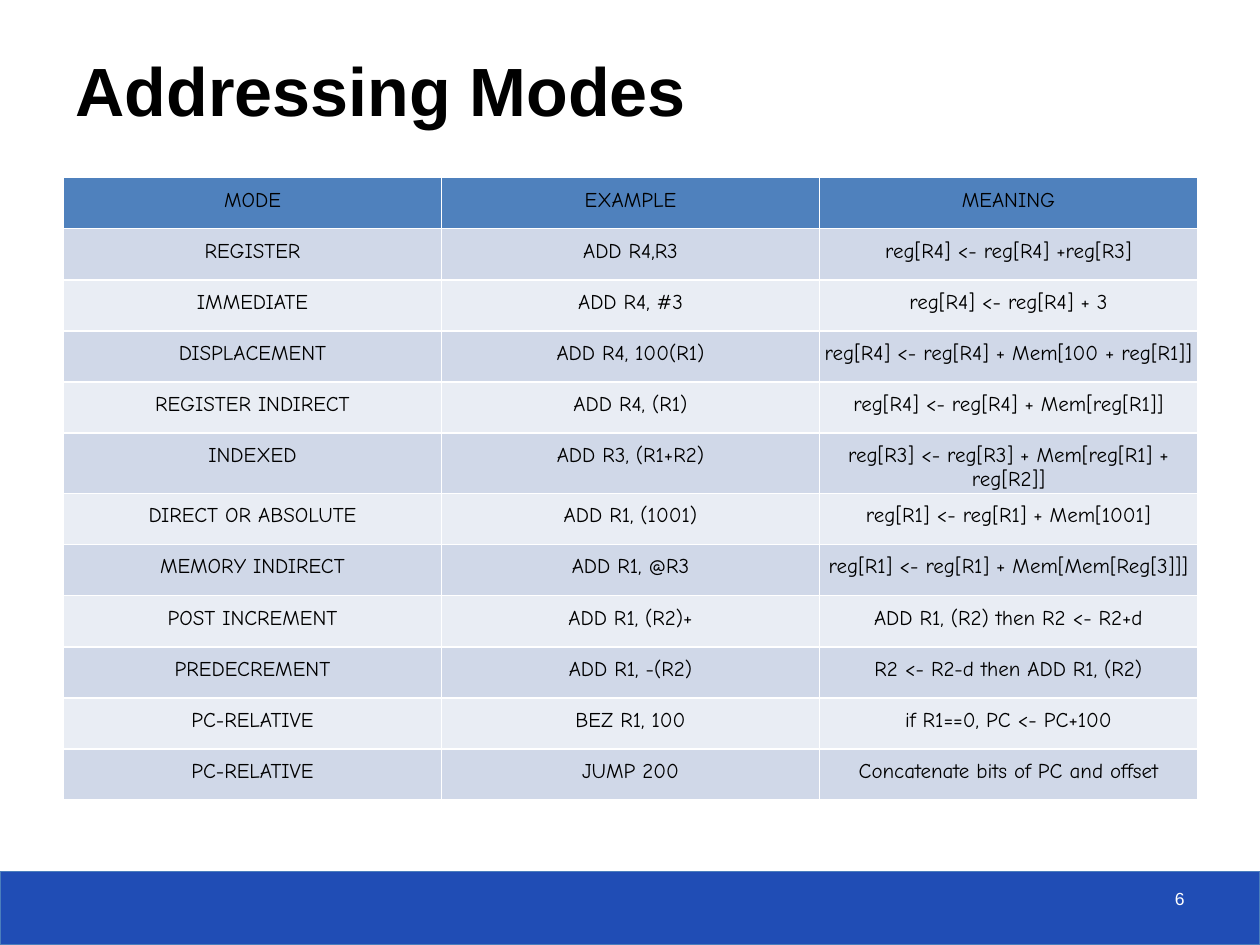
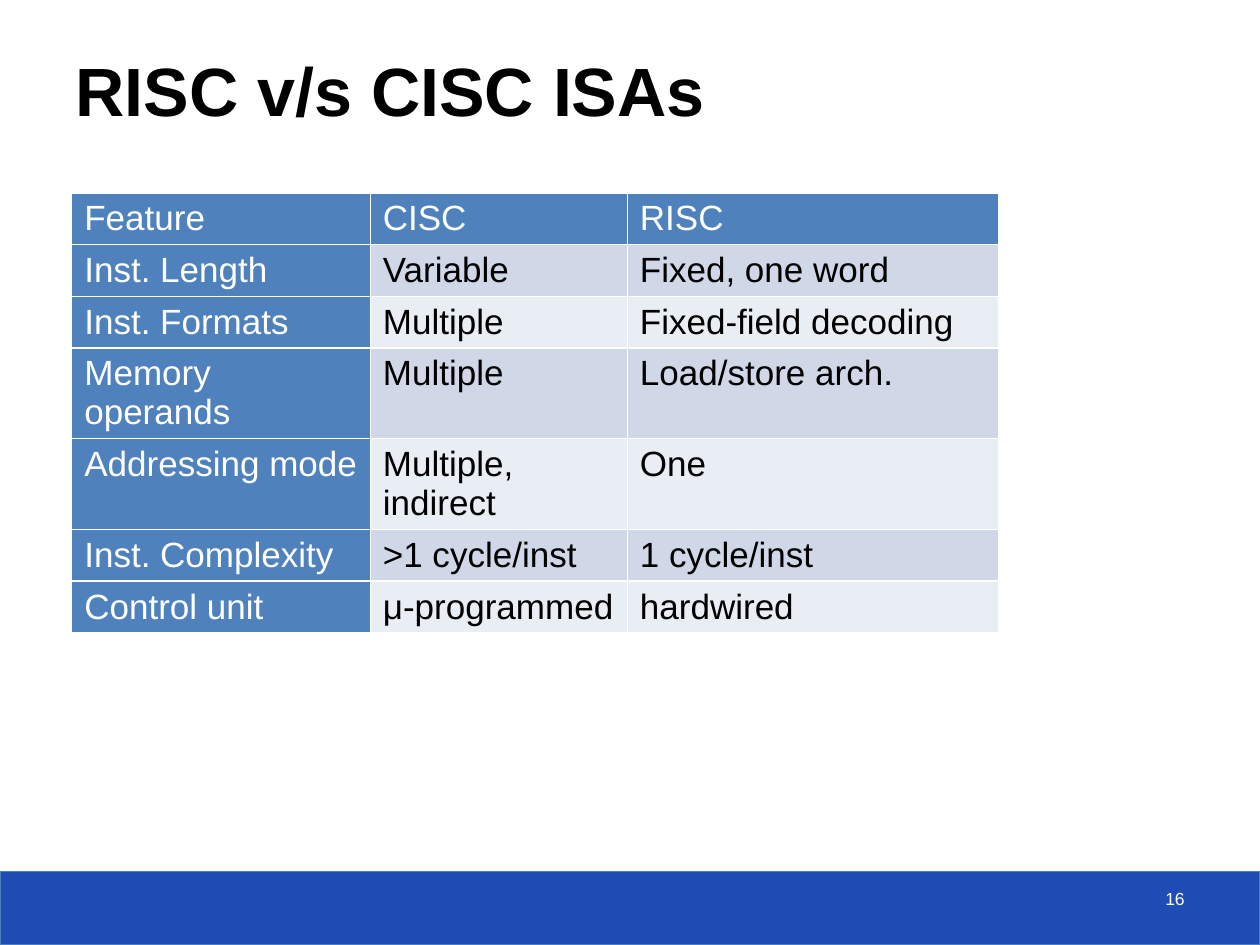
"""Build two slides on instruction set architecture: addressing modes, and RISC v/s CISC."""
from dataclasses import dataclass

from lxml import etree
from pptx import Presentation
from pptx.dml.color import RGBColor
from pptx.enum.shapes import MSO_SHAPE
from pptx.enum.text import MSO_ANCHOR, MSO_AUTO_SIZE, PP_ALIGN
from pptx.oxml.ns import qn
from pptx.util import Length, Pt

RECTANGLE = MSO_SHAPE.RECTANGLE
BOTTOM = MSO_ANCHOR.BOTTOM
NO_AUTOFIT = MSO_AUTO_SIZE.NONE
LEFT, CENTER, RIGHT = PP_ALIGN.LEFT, PP_ALIGN.CENTER, PP_ALIGN.RIGHT

WHITE = RGBColor(0xFF, 0xFF, 0xFF)
BLACK = RGBColor(0x00, 0x00, 0x00)
BAND_FILL = RGBColor(0x20, 0x4D, 0xB5)
BAND_LINE = RGBColor(0x4B, 0x7E, 0xBC)
HEADER_FILL = RGBColor(0x4F, 0x81, 0xBD)
ROW_FILLS = (RGBColor(0xE9, 0xED, 0xF4), RGBColor(0xD0, 0xD8, 0xE8))

MAIN_FONT = "Arial"
HAND_FONT = "Comic Neue"
SLIDE_WIDTH, SLIDE_HEIGHT = Pt(720), Pt(540)
BAND_TOP = Pt(498)
ROW_HEIGHT = Pt(29.2)
BORDER_WIDTH = Pt(1)
TITLE_ONLY = 5

ADDRESSING_ROWS = (
    ("MODE", "EXAMPLE", "MEANING"),
    ("REGISTER", "ADD R4,R3", "reg[R4] <- reg[R4] +reg[R3]"),
    ("IMMEDIATE", "ADD R4, #3", "reg[R4] <- reg[R4] + 3"),
    ("DISPLACEMENT", "ADD R4, 100(R1)", "reg[R4] <- reg[R4] + Mem[100 + reg[R1]]"),
    ("REGISTER INDIRECT", "ADD R4, (R1)", "reg[R4] <- reg[R4] + Mem[reg[R1]]"),
    ("INDEXED", "ADD R3, (R1+R2)", "reg[R3] <- reg[R3] + Mem[reg[R1] + reg[R2]]"),
    ("DIRECT OR ABSOLUTE", "ADD R1, (1001)", "reg[R1] <- reg[R1] + Mem[1001]"),
    ("MEMORY INDIRECT", "ADD R1, @R3", "reg[R1] <- reg[R1] + Mem[Mem[Reg[3]]]"),
    ("POST INCREMENT", "ADD R1, (R2)+", "ADD R1, (R2) then R2 <- R2+d"),
    ("PREDECREMENT", "ADD R1, -(R2)", "R2 <- R2-d then ADD R1, (R2)"),
    ("PC-RELATIVE", "BEZ R1, 100", "if R1==0, PC <- PC+100"),
    ("PC-RELATIVE", "JUMP 200", "Concatenate bits of PC and offset"),
)
COMPARISON_ROWS = (
    ("Feature", "CISC", "RISC"),
    ("Inst. Length", "Variable", "Fixed, one word"),
    ("Inst. Formats", "Multiple", "Fixed-field decoding"),
    ("Memory operands", "Multiple", "Load/store arch."),
    ("Addressing mode", "Multiple, indirect", "One"),
    ("Inst. Complexity", ">1 cycle/inst", "1 cycle/inst"),
    ("Control unit", "μ-programmed", "hardwired"),
)


@dataclass(frozen=True)
class TableDesign:
    """Content, place and text style of one table."""
    rows: tuple[tuple[str, ...], ...]
    left: Length
    top: Length
    column_widths: tuple[Length, ...]
    font: str
    size: Length
    header_color: RGBColor
    align: PP_ALIGN = LEFT
    line_spacing: Length | None = None
    margins: tuple[Length, ...] = (Pt(7.2), Pt(3.6), Pt(7.2), Pt(3.6))
    header_column: bool = False


@dataclass(frozen=True)
class SlideDesign:
    """Title, printed number and table of one slide."""
    title: str
    number: int
    table: TableDesign


SLIDES = (
    SlideDesign("Addressing Modes", 6, TableDesign(
        ADDRESSING_ROWS, Pt(36.3), Pt(101.5), (Pt(216),) * 3, HAND_FONT, Pt(12), BLACK,
        align=CENTER, line_spacing=Pt(14),
        margins=(Pt(2.2), Pt(5.8), Pt(2.2), Pt(0.7)))),
    SlideDesign("RISC v/s CISC ISAs", 16, TableDesign(
        COMPARISON_ROWS, Pt(41), Pt(110.2), (Pt(170.6), Pt(146.9), Pt(212.4)),
        MAIN_FONT, Pt(20), WHITE, header_column=True)),
)


def write_text(text_frame, text: str, *, size: Length, color: RGBColor, font: str = MAIN_FONT,
               bold: bool = False, align: PP_ALIGN = LEFT,
               line_spacing: Length | None = None) -> None:
    """Fill a text frame with one formatted paragraph."""
    text_frame.word_wrap = True
    paragraph = text_frame.paragraphs[0]
    paragraph.alignment = align
    paragraph.line_spacing = line_spacing
    run = paragraph.add_run()
    run.text = text
    run.font.name = font
    run.font.size = size
    run.font.bold = bold
    run.font.color.rgb = color


def add_band(slide) -> None:
    """Draw the blue band at the foot of a slide."""
    band = slide.shapes.add_shape(RECTANGLE, 0, BAND_TOP, SLIDE_WIDTH, SLIDE_HEIGHT - BAND_TOP)
    band.shadow.inherit = False
    band.fill.solid()
    band.fill.fore_color.rgb = BAND_FILL
    band.line.color.rgb = BAND_LINE
    band.line.width = Pt(0.75)


def set_title(slide, text: str) -> None:
    """Place and format the title placeholder on its translucent white fill."""
    title = slide.shapes.title
    title.left, title.top, title.width, title.height = Pt(36), Pt(18), Pt(664), Pt(60)
    title.fill.solid()
    title.fill.fore_color.rgb = WHITE
    color = title.fill._xPr.find(f".//{qn('a:srgbClr')}")
    etree.SubElement(color, qn("a:alpha")).set("val", "75000")
    title.text_frame.vertical_anchor = BOTTOM
    title.text_frame.auto_size = NO_AUTOFIT
    write_text(title.text_frame, text, size=Pt(39), color=BLACK, bold=True)


def add_number(slide, number: int) -> None:
    """Write the slide number on the band."""
    box = slide.shapes.add_textbox(Pt(516), Pt(504), Pt(168), Pt(24))
    write_text(box.text_frame, str(number), size=Pt(10), color=WHITE, align=RIGHT)


def set_borders(cell) -> None:
    """Give a cell white lines on all four sides."""
    properties = cell._tc.get_or_add_tcPr()
    for position, side in enumerate(("a:lnL", "a:lnR", "a:lnT", "a:lnB")):
        line = etree.Element(qn(side), w=str(BORDER_WIDTH))
        fill = etree.SubElement(line, qn("a:solidFill"))
        etree.SubElement(fill, qn("a:srgbClr"), val=str(WHITE))
        properties.insert(position, line)


def add_table(slide, design: TableDesign) -> None:
    """Draw a table with header cells and alternating row fills."""
    row_count, column_count = len(design.rows), len(design.column_widths)
    table = slide.shapes.add_table(
        row_count, column_count, design.left, design.top,
        sum(design.column_widths), ROW_HEIGHT * row_count).table
    table.first_col = design.header_column
    for column, width in zip(table.columns, design.column_widths):
        column.width = width
    for row_index, texts in enumerate(design.rows):
        table.rows[row_index].height = ROW_HEIGHT
        for column_index, text in enumerate(texts):
            cell = table.cell(row_index, column_index)
            is_header = row_index == 0 or (design.header_column and column_index == 0)
            (cell.margin_left, cell.margin_top,
             cell.margin_right, cell.margin_bottom) = design.margins
            cell.fill.solid()
            cell.fill.fore_color.rgb = HEADER_FILL if is_header else ROW_FILLS[row_index % 2]
            set_borders(cell)
            write_text(cell.text_frame, text, size=design.size, font=design.font,
                       color=design.header_color if is_header else BLACK,
                       align=design.align, line_spacing=design.line_spacing)


def main() -> None:
    """Build and save the presentation."""
    presentation = Presentation()
    presentation.slide_width, presentation.slide_height = SLIDE_WIDTH, SLIDE_HEIGHT
    for design in SLIDES:
        slide = presentation.slides.add_slide(presentation.slide_layouts[TITLE_ONLY])
        add_band(slide)
        set_title(slide, design.title)
        add_table(slide, design.table)
        add_number(slide, design.number)
    presentation.save("out.pptx")


if __name__ == "__main__":
    main()
